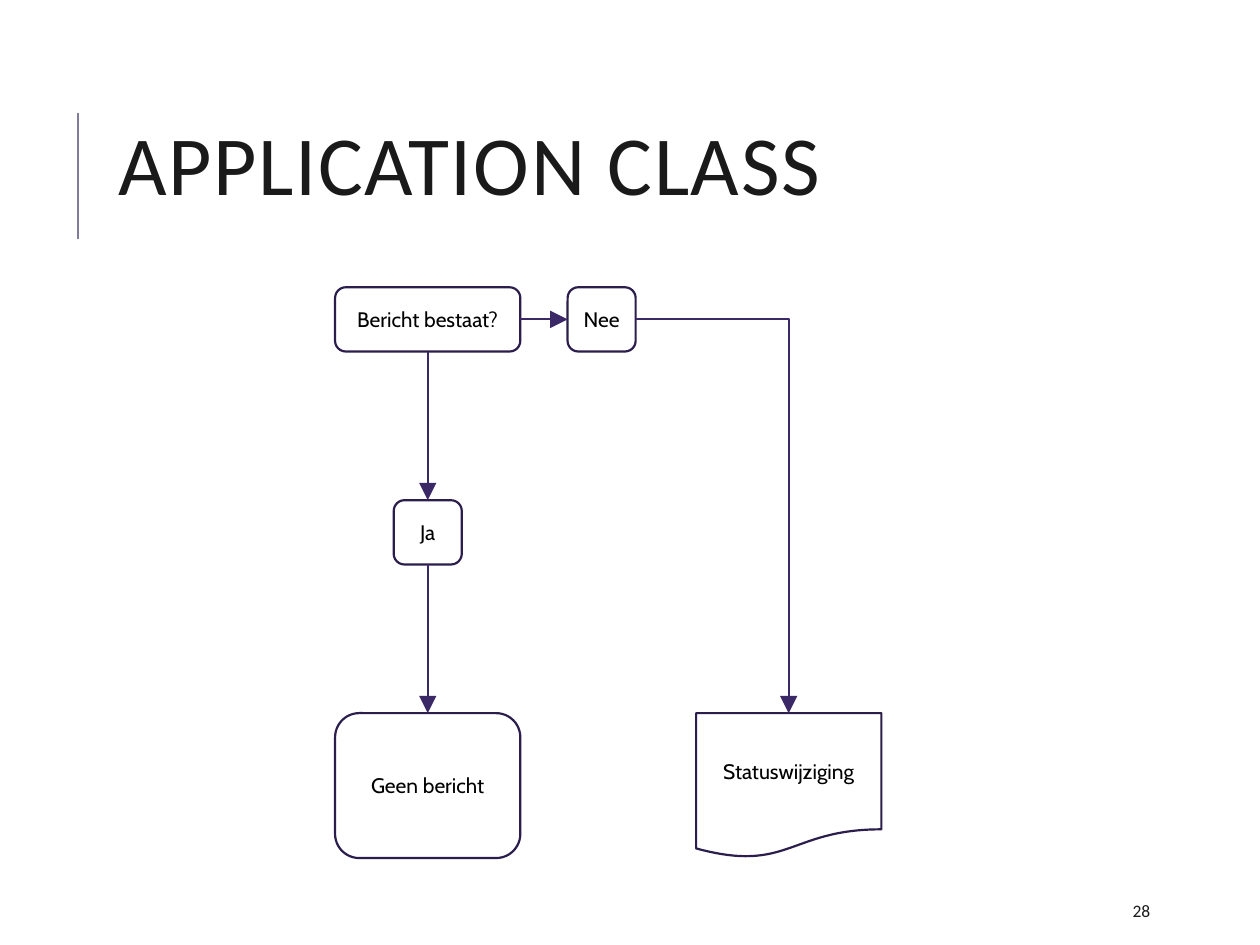
from lxml import etree
from pptx import Presentation
from pptx.dml.color import RGBColor
from pptx.enum.shapes import MSO_CONNECTOR, MSO_SHAPE
from pptx.enum.text import MSO_ANCHOR, PP_ALIGN
from pptx.oxml.ns import qn
from pptx.util import Inches, Pt

ROUND, DOCUMENT = MSO_SHAPE.ROUNDED_RECTANGLE, MSO_SHAPE.FLOWCHART_DOCUMENT
STRAIGHT, ELBOW = MSO_CONNECTOR.STRAIGHT, MSO_CONNECTOR.ELBOW
MIDDLE, LEFT, CENTER = MSO_ANCHOR.MIDDLE, PP_ALIGN.LEFT, PP_ALIGN.CENTER
TOP, SIDE_LEFT, BOTTOM, SIDE_RIGHT = range(4)
COLS, ROWS = 100, 75
COLORS = {"ink": "1A1A1A", "black": "000000", "white": "FFFFFF",
          "border": "2C1E4C", "arrow": "3B2867", "rule": "7F7B99"}
FORMATS = {
    "title": {"name": "Calibri", "size": Pt(48)},
    "number": {"name": "Calibri", "size": Pt(10)},
    "node": {"name": "Cabin", "size": Pt(12)},
}


class Deck:
    """Draws styled elements on the current slide, placed by grid columns and rows."""

    def __init__(self):
        self.prs = Presentation()
        self.prs.slide_width, self.prs.slide_height = Inches(10), Inches(7.5)
        self.s = self.prs.slides.add_slide(self.prs.slide_layouts[6])

    def grid(self, *cells):
        units = self.prs.slide_width / COLS, self.prs.slide_height / ROWS
        return [round(c * units[i % 2]) for i, c in enumerate(cells)]

    def color(self, name):
        return RGBColor.from_string(COLORS[name])

    def label(self, sp, text, style, color, align):
        tf = sp.text_frame
        tf.word_wrap, tf.vertical_anchor = True, MIDDLE
        p = tf.paragraphs[0]
        p.alignment = align
        r = p.add_run()
        r.text = text
        for key, value in FORMATS[style].items():
            setattr(r.font, key, value)
        r.font.color.rgb = self.color(color)
        return p

    def text(self, box, text, style):
        sp = self.s.shapes.add_textbox(*self.grid(*box))
        return sp, self.label(sp, text, style, "ink", LEFT)

    def title(self, box, text):
        sp, p = self.text(box, text, "title")
        sp.text_frame.margin_bottom = Inches(0.25)
        p.line_spacing = 0.8
        p.runs[0].font._element.set("spc", "100")

    def node(self, center, top, size, text, kind=ROUND, fill=None):
        w, h = size
        sp = self.s.shapes.add_shape(kind, *self.grid(center - w / 2, top, w, h))
        sp.shadow.inherit = False
        if fill:
            sp.fill.solid()
            sp.fill.fore_color.rgb = self.color(fill)
        else:
            sp.fill.background()
        sp.line.color.rgb, sp.line.width = self.color("border"), Pt(1.25)
        self.label(sp, text, "node", "black", CENTER)
        return sp

    def line(self, ends, color, width, kind=STRAIGHT):
        sp = self.s.shapes.add_connector(kind, *self.grid(*ends))
        sp.line.color.rgb, sp.line.width = self.color(color), Pt(width)
        etree.SubElement(sp._element.spPr, qn("a:effectLst"))
        return sp

    def arrow(self, start, start_side, end, end_side, kind=STRAIGHT):
        sp = self.line((0, 0, 0, 0), "arrow", 1, kind)
        sp.begin_connect(start, start_side)
        sp.end_connect(end, end_side)
        if kind == ELBOW:
            sp._element.spPr.find(qn("a:prstGeom")).set("prst", "bentConnector2")
        ln = sp._element.spPr.find(qn("a:ln"))
        etree.SubElement(ln, qn("a:tailEnd"), type="triangle", w="lg", len="lg")


def main():
    deck = Deck()
    deck.line((6.2, 19, 6.2, 9), "rule", 1.5)
    deck.text((88.9, 70.8, 8, 3), "28", "number")
    deck.title((8.4, 6.4, 79.7, 16.4), "APPLICATION CLASS")

    wide, small, tall = (14.7, 5.1), (5.4, 5.1), (14.7, 11.5)
    main_col, no_col, status_col = 33.95, 47.75, 62.6
    first, second, third = (22.8 + 16.9 * i for i in range(3))
    question = deck.node(main_col, first, wide, "Bericht bestaat?")
    yes = deck.node(main_col, second, small, "Ja")
    no_message = deck.node(main_col, third, tall, "Geen bericht", fill="white")
    no = deck.node(no_col, first, small, "Nee")
    status = deck.node(status_col, third, tall, "Statuswijziging", DOCUMENT)

    deck.arrow(question, BOTTOM, yes, TOP)
    deck.arrow(yes, BOTTOM, no_message, TOP)
    deck.arrow(question, SIDE_RIGHT, no, SIDE_LEFT)
    deck.arrow(no, SIDE_RIGHT, status, TOP, ELBOW)
    deck.prs.save("out.pptx")


if __name__ == "__main__":
    main()
